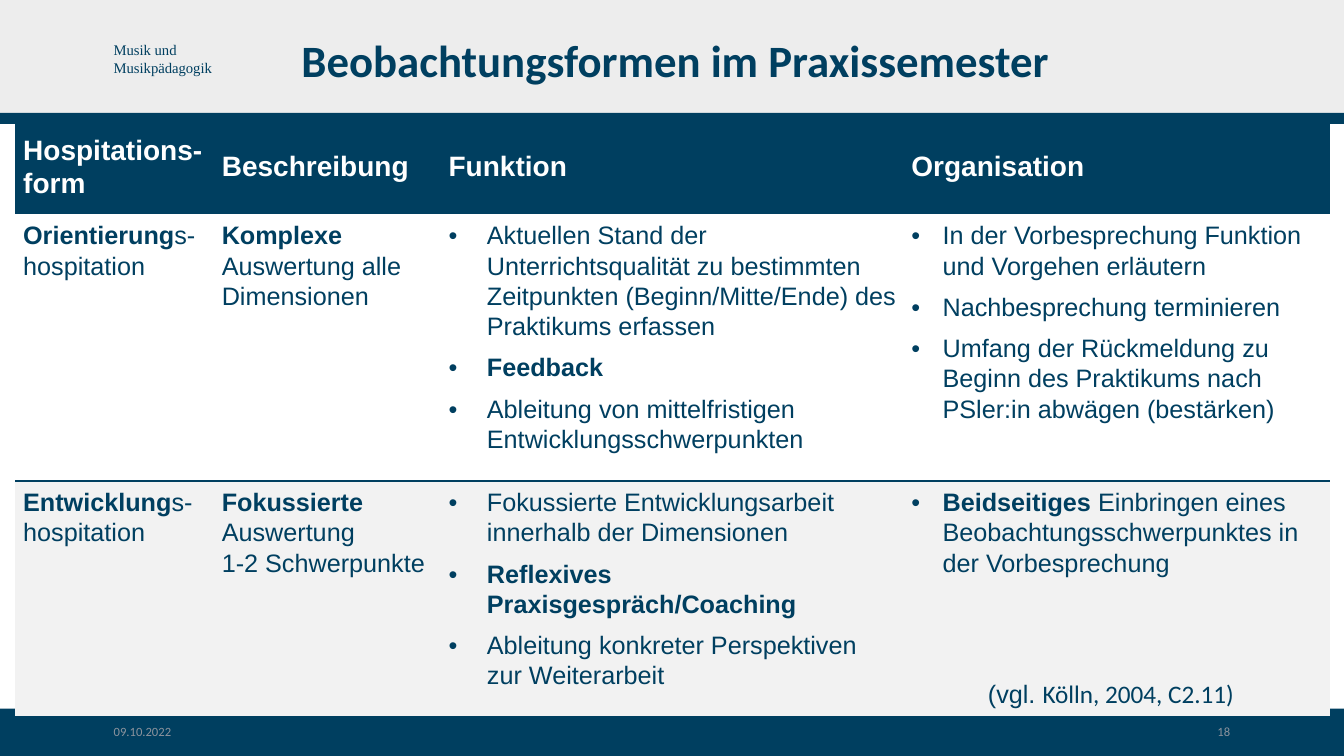
from pptx import Presentation
from pptx.dml.color import RGBColor
from pptx.enum.shapes import MSO_SHAPE
from pptx.enum.text import MSO_ANCHOR, PP_ALIGN
from pptx.oxml import parse_xml
from pptx.oxml.ns import nsdecls
from pptx.util import Pt

PX = 9144
THEME = {
    "navy": "003F60", "pale": "EDEDED", "band": "F2F2F2",
    "white": "FFFFFF", "grey": "8C939D",
    "title": 32, "head": 20, "body": 18, "label": 10.5, "foot": 9,
    "sans": "Arial", "main": "Calibri", "serif": "Times New Roman",
}


def style(run, font, size, color, bold=False):
    run.font.name = THEME[font]
    run.font.size = Pt(THEME[size])
    run.font.color.rgb = RGBColor.from_string(THEME[color])
    run.font.bold = bold


def write(box, lines, font, size, color, bold=False, align=PP_ALIGN.LEFT, space=None):
    frame = slide.shapes.add_textbox(*[n * PX for n in box]).text_frame
    frame.word_wrap = True
    frame.text = lines
    for para in frame.paragraphs:
        para.alignment = align
        para.line_spacing = space
        for run in para.runs:
            style(run, font, size, color, bold)
    return frame


deck = Presentation()
deck.slide_width, deck.slide_height = 1333 * PX, 750 * PX
slide = deck.slides.add_slide(deck.slide_layouts[6])

for top, high, color in [(703, 47, "navy"), (0, 113, "pale"), (112, 11, "navy")]:
    bar = slide.shapes.add_shape(MSO_SHAPE.RECTANGLE, 0, top * PX, 1333 * PX, high * PX)
    bar.shadow.inherit = False
    bar.fill.solid()
    bar.fill.fore_color.rgb = RGBColor.from_string(THEME[color])
    bar.line.fill.background()

write((103, 36, 203, 45), "Musik und\nMusikpädagogik", "serif", "label", "navy")
title = write((220, 19, 900, 87), "Beobachtungsformen im Praxissemester",
              "main", "title", "navy", True, PP_ALIGN.CENTER, 0.9)
title.vertical_anchor = MSO_ANCHOR.MIDDLE
for left, text, align in [(103, "09.10.2022", PP_ALIGN.LEFT), (930, "18", PP_ALIGN.RIGHT)]:
    foot = write((left, 715, 300, 24), text, "main", "foot", "grey", False, align, 0.9)
    foot.vertical_anchor = MSO_ANCHOR.MIDDLE

ROWS = [
    [["*Hospitations-form*"], ["*Beschreibung*"], ["*Funktion*"], ["*Organisation*"]],
    [
        ["*Orientierung*s-hospitation"],
        ["*Komplexe* Auswertung alle Dimensionen"],
        ["Aktuellen Stand der Unterrichtsqualität zu bestimmten Zeitpunkten "
         "(Beginn/Mitte/Ende) des Praktikums erfassen",
         "*Feedback*",
         "Ableitung von mittelfristigen Entwicklungsschwerpunkten"],
        ["In der Vorbesprechung Funktion und Vorgehen erläutern",
         "Nachbesprechung terminieren",
         "Umfang der Rückmeldung zu Beginn des Praktikums nach PSler:in abwägen (bestärken)"],
    ],
    [
        ["*Entwicklung*s-hospitation"],
        ["*Fokussierte* Auswertung\n1-2 Schwerpunkte"],
        ["Fokussierte Entwicklungsarbeit innerhalb der Dimensionen",
         "*Reflexives Praxisgespräch/Coaching*",
         "Ableitung konkreter Perspektiven zur Weiterarbeit"],
        ["*Beidseitiges* Einbringen eines Beobachtungsschwerpunktes in der Vorbesprechung"],
    ],
]
WIDTHS = [197, 225, 459, 423]
HEIGHTS = [92, 261, 229]
INDENTS = [0, 0, 38, 31]
FILLS = ["navy", None, "band"]
EDGES = [None, "lnB", "lnT"]

grid = slide.shapes.add_table(3, 4, 15 * PX, 117 * PX, sum(WIDTHS) * PX, sum(HEIGHTS) * PX)
grid.element.xpath(".//a:tableStyleId")[0].text = "{2D5ABB26-0587-4C30-8999-92F81FD0307C}"
table = grid.table
table.first_row = table.horz_banding = False
for col, width in zip(table.columns, WIDTHS):
    col.width = width * PX
for row, height in zip(table.rows, HEIGHTS):
    row.height = height * PX

for r, row in enumerate(ROWS):
    for c, lines in enumerate(row):
        cell = table.cell(r, c)
        cell.margin_left, cell.margin_right = 8 * PX, 6 * PX
        cell.margin_top, cell.margin_bottom = (6 if r else 12) * PX, 12 * PX
        cell.vertical_anchor = MSO_ANCHOR.TOP if r else MSO_ANCHOR.MIDDLE
        if FILLS[r]:
            cell.fill.solid()
            cell.fill.fore_color.rgb = RGBColor.from_string(THEME[FILLS[r]])
        else:
            cell.fill.background()
        if EDGES[r]:
            cell._tc.get_or_add_tcPr().insert(0, parse_xml(
                f'<a:{EDGES[r]} {nsdecls("a")} w="12700"><a:solidFill>'
                f'<a:srgbClr val="{THEME["navy"]}"/></a:solidFill></a:{EDGES[r]}>'))
        for i, line in enumerate(lines):
            para = cell.text_frame.paragraphs[0] if i == 0 else cell.text_frame.add_paragraph()
            if r and INDENTS[c]:
                props = para._p.get_or_add_pPr()
                props.set("marL", str(INDENTS[c] * PX))
                props.set("indent", str(-INDENTS[c] * PX))
                props.append(parse_xml(f'<a:buFont {nsdecls("a")} typeface="Arial"/>'))
                props.append(parse_xml(f'<a:buChar {nsdecls("a")} char="•"/>'))
            para.line_spacing = 1.07
            para.space_after = Pt(8)
            for n, part in enumerate(line.split("*")):
                for k, piece in enumerate(part.split("\n")):
                    if k:
                        para.add_line_break()
                    if piece:
                        run = para.add_run()
                        run.text = piece
                        style(run, "sans", "body" if r else "head",
                              "navy" if r else "white", n % 2 == 1)

cite = write((970, 668, 300, 40), "(vgl. ", "sans", "body", "navy").paragraphs[0]
run = cite.add_run()
run.text = "Kölln, 2004, C2.11)"
style(run, "main", "body", "navy")

deck.save("out.pptx")
